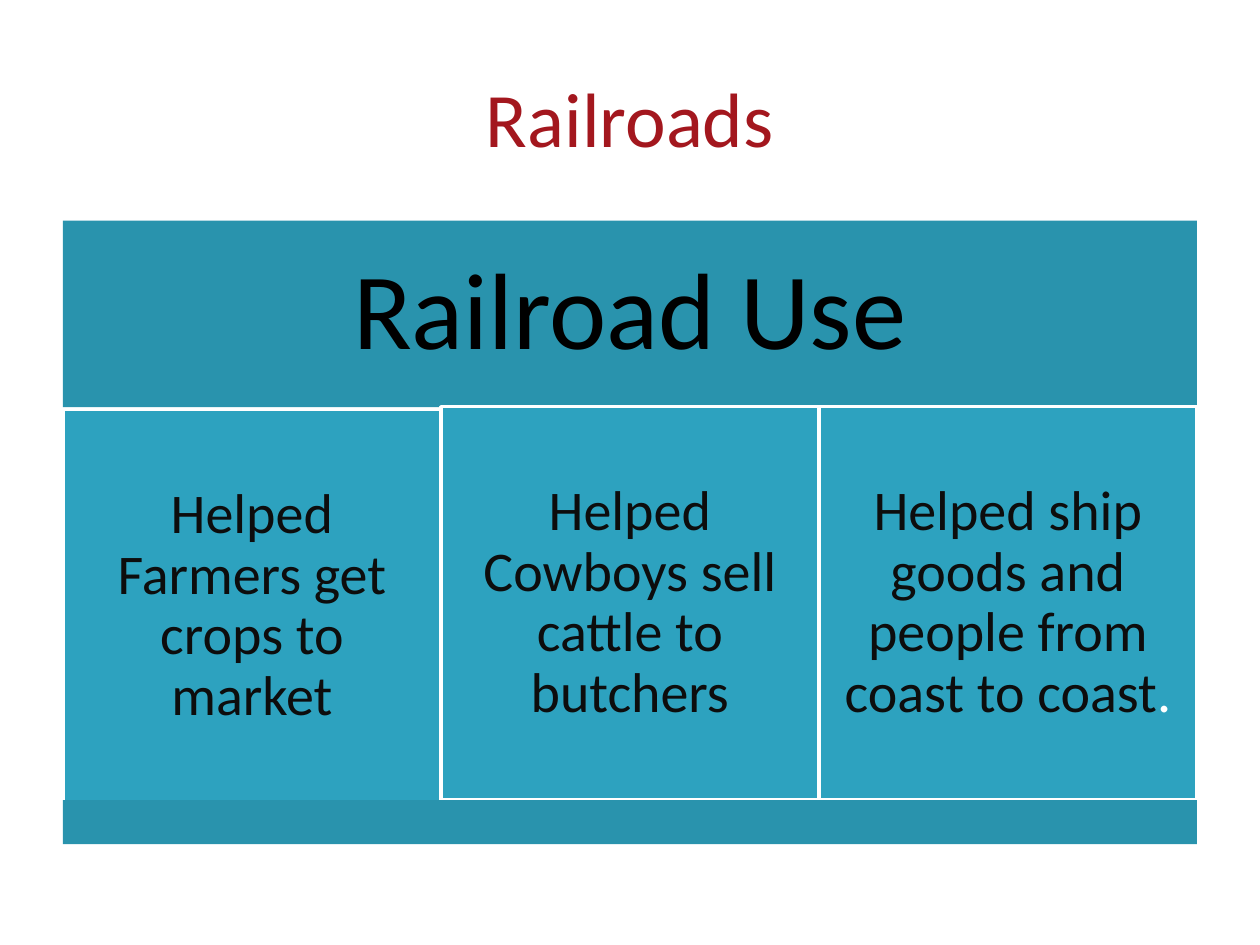
from dataclasses import dataclass

from pptx import Presentation
from pptx.dml.color import RGBColor
from pptx.enum.shapes import MSO_SHAPE
from pptx.enum.text import MSO_ANCHOR, PP_ALIGN
from pptx.util import Cm, Pt

FONT = "Calibri"
LEFT, WIDTH = 1.27, 22.86
BAND, PANEL = "2993AD", "2DA2BF"
WHITE, INK = "FFFFFF", "0D0D0D"


@dataclass
class Box:
    """A filled rectangle, in centimetres, with optional centred text."""
    left: float
    top: float
    width: float
    height: float
    fill: str
    line: str = ""
    text: str = ""
    size: int = 32
    color: str = INK
    inset: float = 0.33
    ending: str = ""  # closing characters in white


def rgb(value: str) -> RGBColor:
    return RGBColor.from_string(value)


def format_run(r, size: int, color: str) -> None:
    r.font.name = FONT
    r.font.size = Pt(size)
    r.font.color.rgb = rgb(color)


def draw_box(slide, box: Box) -> None:
    sp = slide.shapes.add_shape(MSO_SHAPE.RECTANGLE, Cm(box.left), Cm(box.top),
                                Cm(box.width), Cm(box.height))
    sp.shadow.inherit = False
    sp.fill.solid()
    sp.fill.fore_color.rgb = rgb(box.fill)
    if box.line:
        sp.line.color.rgb = rgb(box.line)
        sp.line.width = Pt(2)
    else:
        sp.line.fill.background()
    if not box.text:
        return

    tf = sp.text_frame
    tf.word_wrap = True
    tf.vertical_anchor = MSO_ANCHOR.MIDDLE
    tf.margin_left = tf.margin_right = Cm(box.inset)
    tf.margin_top = tf.margin_bottom = Cm(box.inset)
    p = tf.paragraphs[0]
    p.text = box.text
    p.alignment = PP_ALIGN.CENTER
    p.line_spacing = 0.9
    format_run(p.runs[0], box.size, box.color)
    if box.ending:
        r = p.add_run()
        r.text = box.ending
        format_run(r, box.size, WHITE)


def main() -> None:
    prs = Presentation()
    prs.slide_width, prs.slide_height = Cm(25.4), Cm(19.05)
    slide = prs.slides.add_slide(prs.slide_layouts[5])

    # Title
    title = slide.shapes.title
    title.left, title.top = Cm(LEFT), Cm(0.76)
    title.width, title.height = Cm(WIDTH), Cm(3.18)
    tf = title.text_frame
    tf.text = "Railroads"
    tf.vertical_anchor = MSO_ANCHOR.MIDDLE
    p = tf.paragraphs[0]
    p.alignment = PP_ALIGN.CENTER
    format_run(p.runs[0], 44, "A3171E")

    # Header band
    draw_box(slide, Box(LEFT, 4.45, WIDTH, 3.76, BAND, text="Railroad Use",
                        size=62, color="000000", inset=0.66))

    # Three uses, side by side; the first sits slightly lower
    uses = [
        (8.26, "Helped Farmers get crops to market", ""),
        (8.2, "Helped Cowboys sell cattle to butchers", ""),
        (8.2, "Helped ship goods and people from coast to coast", "."),
    ]
    column = WIDTH / len(uses)
    for i, (top, text, ending) in enumerate(uses):
        draw_box(slide, Box(LEFT + i * column, top, column, 7.92, PANEL,
                            line=WHITE, text=text, ending=ending))

    # Footer band
    draw_box(slide, Box(LEFT, 16.13, WIDTH, 0.89, BAND))

    prs.save("out.pptx")


if __name__ == "__main__":
    main()
